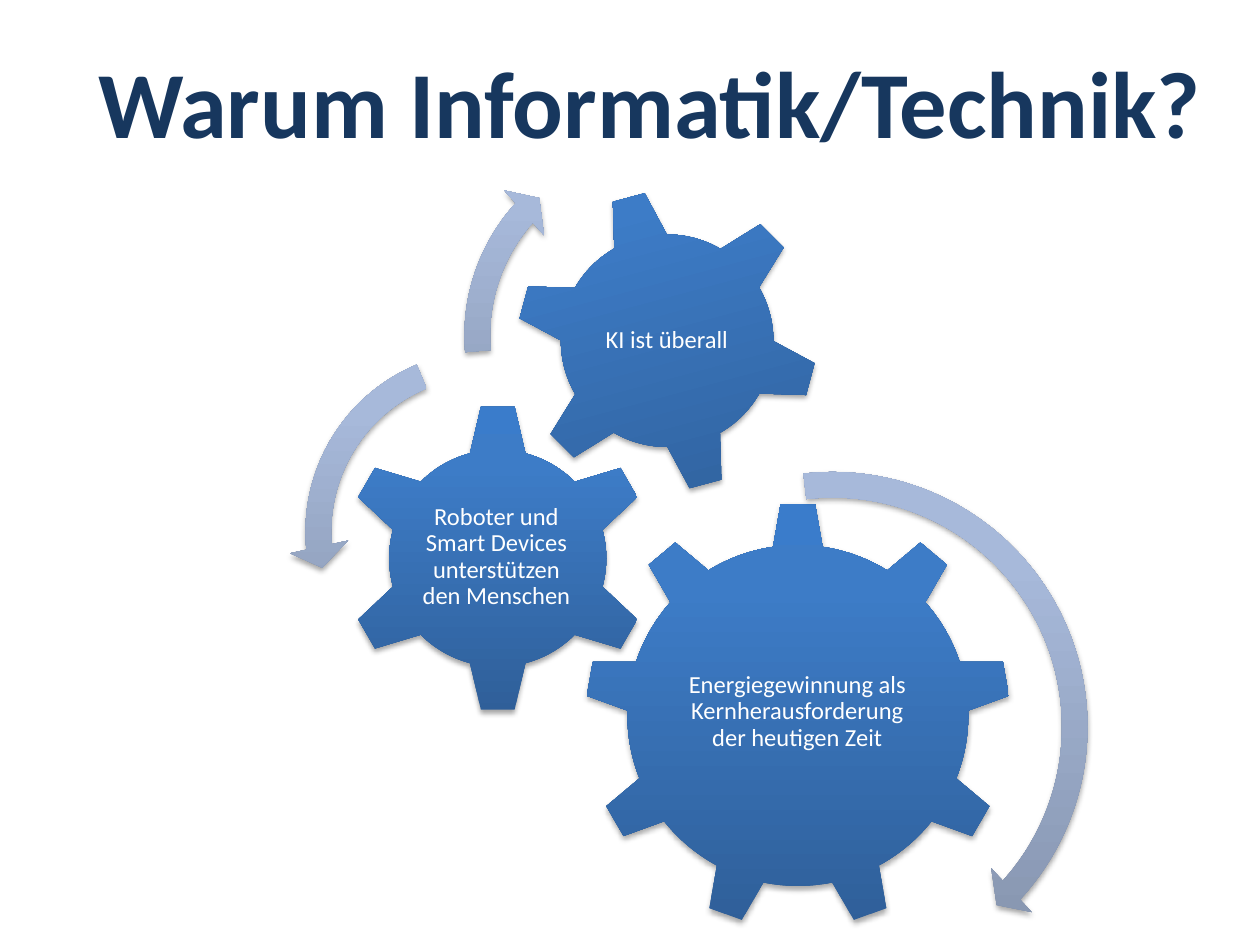
from lxml import etree
from pptx import Presentation
from pptx.dml.color import RGBColor
from pptx.enum import shapes, text
from pptx.oxml import ns
from pptx.util import Cm, Pt

KIND = shapes.MSO_SHAPE
BLUE = [(0, "2F5F99"), (80, "3D7CC7"), (100, "3A7CCB")]
PALE = [(0, "818FA8"), (80, "A7B9DA"), (100, "A7BADC")]

# kind, left, top, side, turn, label, label box
GEARS = [
    (KIND.GEAR_9, 11.79, 10.13, 8.59, 0,
     "Energiegewinnung als Kernherausforderung der heutigen Zeit",
     (13.51, 12.14, 5.13, 4.42)),
    (KIND.GEAR_6, 6.91, 8.13, 6.25, 0,
     "Roboter und Smart Devices unterstützen den Menschen",
     (8.46, 9.7, 3.1, 3.07)),
    (KIND.GEAR_6, 10.39, 3.81, 6.12, 345,
     "KI ist überall",
     (11.73, 5.16, 3.43, 3.43)),
]
# kind, left, top, side, adjustments
ARROWS = [
    (KIND.CIRCULAR_ARROW, 11.3, 9.17, 10.97,
     (0.047, 2.99, 25.422, 158.063, 0.055)),
    (KIND.LEFT_CIRCULAR_ARROW, 5.82, 6.73, 7.98,
     (0.065, 4.3, 104.891, 148.378, 0.075)),
    (KIND.CIRCULAR_ARROW, 9.02, 2.46, 8.61,
     (0.06, 3.941, 133.138, 105.082, 0.07)),
]


def tint(code):
    return RGBColor.from_string(code)


def style(item, form):
    for name, value in form.items():
        setattr(item, name, value)


def node(up, tag, **attrs):
    return etree.SubElement(up, ns.qn(tag), {k: str(v) for k, v in attrs.items()})


def shade(shape, stops):
    """Give a shape an upward gradient, no line and a soft shadow below."""
    shape.line.fill.background()
    props = shape._element.spPr
    grad = node(props, "a:gradFill", rotWithShape=1)
    group = node(grad, "a:gsLst")
    for place, code in stops:
        stop = node(group, "a:gs", pos=place * 1000)
        node(stop, "a:srgbClr", val=code)
    node(grad, "a:lin", ang=270 * 60000, scaled=0)
    props.find(ns.qn("a:ln")).addprevious(grad)
    drop = node(node(props, "a:effectLst"), "a:outerShdw", blurRad=Pt(3.1),
                dist=Pt(1.8), dir=90 * 60000, rotWithShape=0)
    node(node(drop, "a:srgbClr", val="000000"), "a:alpha", val=35000)


def write(frame, words, size, code, bold=False, **form):
    frame.text = words
    style(frame, {"vertical_anchor": text.MSO_ANCHOR.MIDDLE, **form})
    para = frame.paragraphs[0]
    para.alignment = text.PP_ALIGN.CENTER
    style(para.runs[0].font, {"name": "Calibri", "size": Pt(size), "bold": bold})
    para.runs[0].font.color.rgb = tint(code)
    return para


def add_label(slide, words, box):
    frame = slide.shapes.add_textbox(*map(Cm, box)).text_frame
    sides = ("left", "top", "right", "bottom")
    margins = {f"margin_{side}": Cm(0.05) for side in sides}
    para = write(frame, words, 14, "FFFFFF", word_wrap=True, **margins)
    para.line_spacing = 0.9


def add_disc(slide, kind, left, top, side, stops):
    shape = slide.shapes.add_shape(kind, *map(Cm, (left, top, side, side)))
    shade(shape, stops)
    return shape


def add_title(slide, words):
    title = slide.shapes.title
    style(title, {"left": Cm(1.6), "top": Cm(0.74),
                  "width": Cm(22.99), "height": Cm(2.57)})
    write(title.text_frame, words, 54, "17375E", bold=True, word_wrap=False)


def main():
    deck = Presentation()
    style(deck, {"slide_width": Cm(25.4), "slide_height": Cm(19.05)})
    slide = deck.slides.add_slide(deck.slide_layouts[5])
    add_title(slide, "Warum Informatik/Technik?")
    for kind, left, top, side, turn, words, box in GEARS:
        add_disc(slide, kind, left, top, side, BLUE).rotation = turn
        add_label(slide, words, box)
    for kind, left, top, side, bends in ARROWS:
        arrow = add_disc(slide, kind, left, top, side, PALE)
        for i, bend in enumerate(bends):
            arrow.adjustments[i] = bend
    deck.save("out.pptx")


if __name__ == "__main__":
    main()
